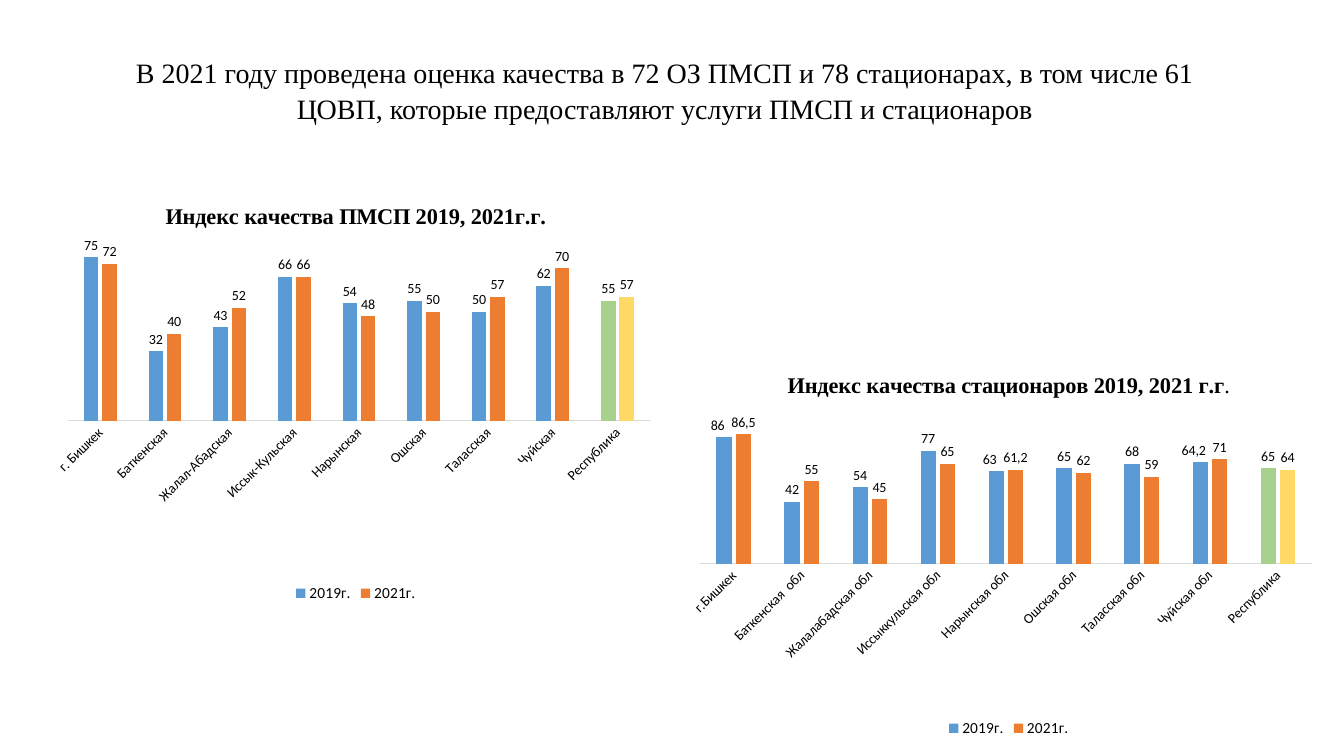
"""Build a slide comparing quality indices of primary care and hospitals by region."""
from lxml import etree
from pptx import Presentation
from pptx.chart.data import CategoryChartData
from pptx.dml.color import RGBColor
from pptx.enum import chart as ch, text
from pptx.oxml.ns import qn
from pptx.util import Inches, Pt

HEADING = ("В 2021 году проведена оценка качества в 72 ОЗ ПМСП и 78 стационарах, в том числе 61 "
           "ЦОВП, которые предоставляют услуги ПМСП и стационаров")
COLORS = {"text": "000000", "axis": "D9D9D9", "2019г.": "5B9BD5", "2021г.": "ED7D31"}
REPUBLIC_COLORS = {"2019г.": "A9D18E", "2021г.": "FFD966"}
HEADING_FONT, CHART_FONT = "Times New Roman", "Calibri"
LABEL_NUDGE = {"x": -0.01, "y": 0}

INDICES = [
    {
        "title": [("Индекс качества стационаров 2019, 2021 г.г", True), (".", False)],
        "frame": (6.82, 3.53, 6.37, 3.83),
        "plot": {"x": 0.019, "y": 0.158, "w": 0.953, "h": 0.381},
        "top": 100,
        "regions": ["г.Бишкек", "Баткенская  обл", "Жалалабадская обл", "Иссыккульская обл",
                    "Нарынская обл", "Ошская обл", "Таласская обл", "Чуйская обл", "Республика"],
        "years": {"2019г.": [86, 42, 52, 77, 63, 65, 68, 69, 65],
                  "2021г.": [88, 56, 44, 68, 64, 62, 59, 71, 64]},
        "labels": {"2019г.": {0: "86", 2: "54", 4: "63", 7: "64,2"},
                   "2021г.": {0: "86,5", 1: "55", 2: "45", 3: "65", 4: "61,2"}},
        "nudged": {"2019г.": [0, 4, 7]},
    },
    {
        "title": [("Индекс качества ПМСП 2019, 2021г.г.", True)],
        "frame": (0.46, 1.83, 6.14, 4.19),
        "plot": {"x": 0.035, "y": 0.147, "w": 0.94, "h": 0.413},
        "top": 80,
        "regions": ["г. Бишкек", "Баткенская", "Жалал-Абадская", "Иссык-Кульская",
                    "Нарынская", "Ошская", "Таласская", "Чуйская", "Республика"],
        "years": {"2019г.": [75, 32, 43, 66, 54, 55, 50, 62, 55],
                  "2021г.": [72, 40, 52, 66, 48, 50, 57, 70, 57]},
        "labels": {},
        "nudged": {},
    },
]


def style(font, size, name=CHART_FONT, bold=False):
    font.size, font.name, font.bold = Pt(size), name, bold
    font.color.rgb = RGBColor.from_string(COLORS["text"])


def paint(fill, color):
    fill.solid()
    fill.fore_color.rgb = RGBColor.from_string(color)


def set_layout(parent, position, settings):
    for old in parent.findall(qn("c:layout")):
        parent.remove(old)
    layout = etree.Element(qn("c:layout"))
    manual = etree.SubElement(layout, qn("c:manualLayout"))
    for tag, value in settings.items():
        etree.SubElement(manual, qn(f"c:{tag}")).set("val", str(value))
    parent.insert(position, layout)


def style_axes(chart, top):
    regions, values = chart.category_axis, chart.value_axis
    regions.major_tick_mark = ch.XL_TICK_MARK.NONE
    regions.format.line.width = Pt(0.75)
    regions.format.line.color.rgb = RGBColor.from_string(COLORS["axis"])
    style(regions.tick_labels.font, 10)
    regions._element.find(qn("c:txPr")).find(qn("a:bodyPr")).set("rot", "-2700000")
    values.minimum_scale, values.maximum_scale = 0, top
    values.has_major_gridlines = False
    values.visible = False


def style_series(series, labels, nudged):
    paint(series.format.fill, COLORS[series.name])
    republic = len(series.values) - 1
    paint(series.points[republic].format.fill, REPUBLIC_COLORS[series.name])
    shown = series.data_labels
    shown.show_value = True
    shown.number_format, shown.number_format_is_linked = "0", False
    shown.position = ch.XL_LABEL_POSITION.OUTSIDE_END
    style(shown.font, 10)
    for index, wording in labels.items():
        label = series.points[index].data_label
        run = label.text_frame.paragraphs[0].add_run()
        run.text = wording
        style(run.font, 10)
        label.position = ch.XL_LABEL_POSITION.OUTSIDE_END
        if index in nudged:
            set_layout(label._get_or_add_dLbl(), 1, LABEL_NUDGE)


def add_index(slide, index):
    data = CategoryChartData(number_format="0")
    data.categories = index["regions"]
    for year, values in index["years"].items():
        data.add_series(year, values)
    chart = slide.shapes.add_chart(
        ch.XL_CHART_TYPE.COLUMN_CLUSTERED, *map(Inches, index["frame"]), data).chart
    style(chart.font, 10)
    chart.has_title = True
    chart.chart_title.include_in_layout = False
    title = chart.chart_title.text_frame.paragraphs[0]
    for wording, bold in index["title"]:
        run = title.add_run()
        run.text = wording
        style(run.font, 16, HEADING_FONT, bold)
    chart.has_legend = True
    chart.legend.position = ch.XL_LEGEND_POSITION.BOTTOM
    chart.legend.include_in_layout = False
    style(chart.legend.font, 11)
    bars = chart.plots[0]
    bars.gap_width, bars.overlap, bars.vary_by_categories = 219, -27, False
    style_axes(chart, index["top"])
    set_layout(chart._chartSpace.chart.plotArea, 0,
               {"layoutTarget": "inner", "xMode": "edge", "yMode": "edge", **index["plot"]})
    for series in bars.series:
        style_series(series, index["labels"].get(series.name, {}),
                     index["nudged"].get(series.name, []))


def add_heading(slide):
    heading = slide.shapes.title
    heading.left, heading.top, heading.width, heading.height = map(Inches, (0.98, 0, 11.23, 1.33))
    frame = heading.text_frame
    frame.word_wrap = True
    frame.auto_size = text.MSO_AUTO_SIZE.NONE
    frame.vertical_anchor = text.MSO_ANCHOR.BOTTOM
    frame.margin_bottom = Inches(0.09)
    line = frame.paragraphs[0]
    line.alignment = text.PP_ALIGN.CENTER
    line.line_spacing = 1.07
    run = line.add_run()
    run.text = HEADING
    style(run.font, 20, HEADING_FONT)


def main():
    deck = Presentation()
    deck.slide_width, deck.slide_height = Inches(13.33), Inches(7.5)
    slide = deck.slides.add_slide(deck.slide_layouts[5])
    add_heading(slide)
    for index in INDICES:
        add_index(slide, index)
    deck.save("out.pptx")


if __name__ == "__main__":
    main()
